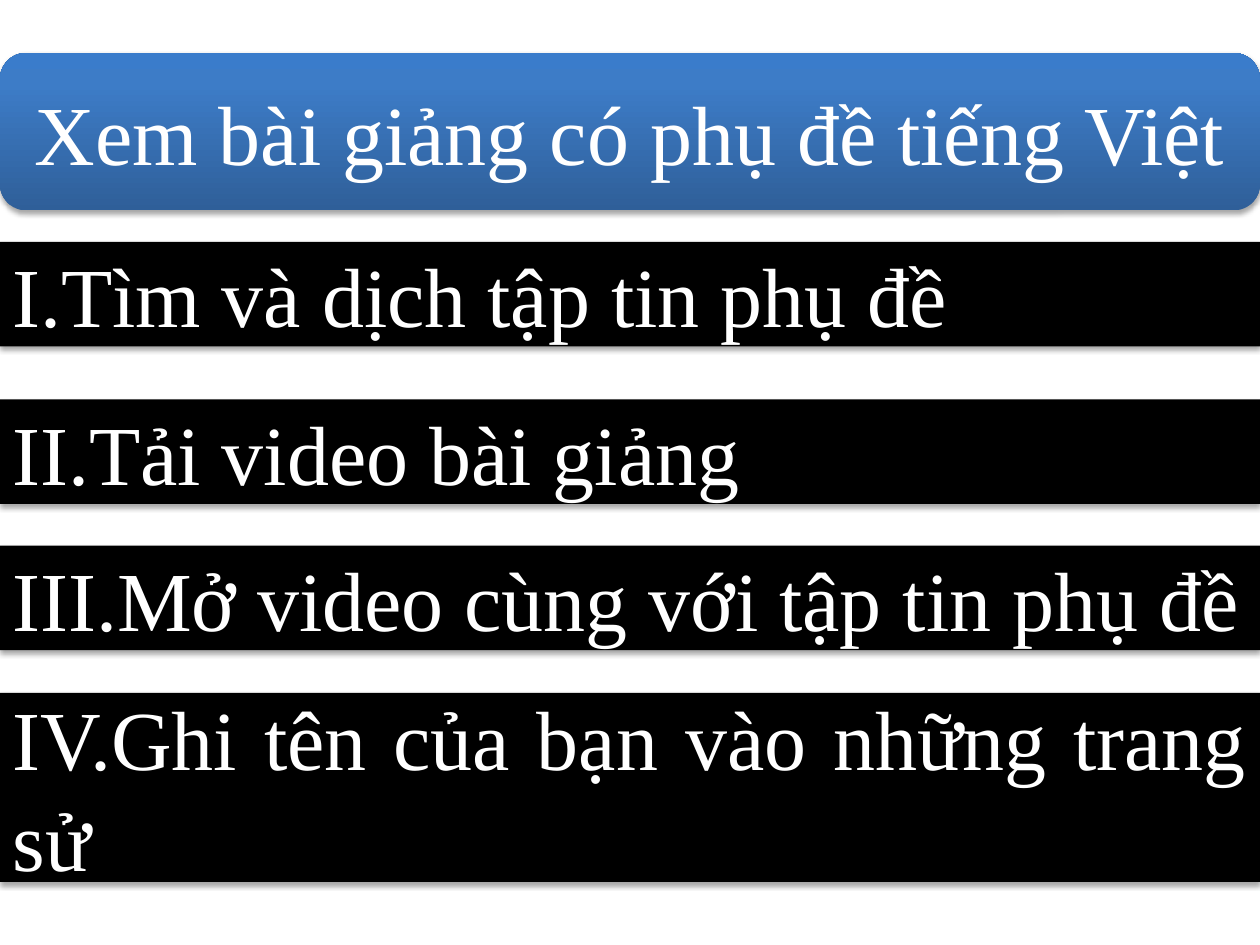
from dataclasses import dataclass

from lxml.etree import SubElement
from pptx import Presentation
from pptx.dml.color import RGBColor
from pptx.enum.shapes import MSO_SHAPE as Kind
from pptx.enum.text import MSO_ANCHOR as Anchor, PP_ALIGN as Align
from pptx.oxml.ns import qn
from pptx.shapes.autoshape import Shape
from pptx.util import Inches, Pt

BLACK = RGBColor(0x00, 0x00, 0x00)
WHITE = RGBColor(0xFF, 0xFF, 0xFF)
NAVY = RGBColor(0x2F, 0x5F, 0x99)
BLUE = RGBColor(0x3D, 0x7C, 0xC7)
SKY = RGBColor(0x3A, 0x7C, 0xCB)
STOPS = [(0, NAVY), (80, BLUE), (100, SKY)]
FONT = "Times New Roman"
SIZE = Pt(48)
WIDTH = Inches(10)


@dataclass
class Bar:
    text: str
    top: float
    height: float = 0.83


TITLE = Bar("Xem bài giảng có phụ đề tiếng Việt", 0.42, 1.25)
STEPS = [
    Bar("I.Tìm và dịch tập tin phụ đề", 1.92),
    Bar("II.Tải video bài giảng", 3.17),
    Bar("III.Mở video cùng với tập tin phụ đề", 4.33),
    Bar("IV.Ghi tên của bạn vào những trang sử", 5.5, 1.5),
]


def add_shade(shape: Shape) -> None:
    """Cast a soft shadow straight down."""
    shape.shadow.inherit = False
    effects = shape._element.spPr.find(qn("a:effectLst"))
    shade = SubElement(effects, qn("a:outerShdw"), blurRad=str(Pt(3.1)),
                       dist=str(Pt(1.8)), dir="5400000", rotWithShape="0")
    color = SubElement(shade, qn("a:srgbClr"), val=str(BLACK))
    SubElement(color, qn("a:alpha"), val="35000")


def set_blend(shape: Shape) -> None:
    """Fill with the blue gradient, dark at the bottom."""
    shape.fill.gradient()
    shape.fill.gradient_angle = 90
    stops = shape._element.spPr.find(qn("a:gradFill")).find(qn("a:gsLst"))
    for old in list(stops):
        stops.remove(old)
    for place, color in STOPS:
        stop = SubElement(stops, qn("a:gs"), pos=str(place * 1000))
        SubElement(stop, qn("a:srgbClr"), val=str(color))


def add_bar(slide, bar: Bar, kind: Kind, align: Align) -> Shape:
    """Draw a full-width black bar with white text."""
    shape = slide.shapes.add_shape(
        kind, 0, Inches(bar.top), WIDTH, Inches(bar.height))
    shape.fill.solid()
    shape.fill.fore_color.rgb = BLACK
    shape.line.fill.background()
    add_shade(shape)

    frame = shape.text_frame
    frame.word_wrap = True
    frame.vertical_anchor = Anchor.MIDDLE
    para = frame.paragraphs[0]
    para.alignment = align
    run = para.add_run()
    run.text = bar.text
    run.font.name = FONT
    run.font.size = SIZE
    run.font.color.rgb = WHITE
    return shape


def main() -> None:
    deck = Presentation()
    deck.slide_width, deck.slide_height = WIDTH, Inches(7.5)
    slide = deck.slides.add_slide(deck.slide_layouts[6])

    # Title banner
    set_blend(add_bar(slide, TITLE, Kind.ROUNDED_RECTANGLE, Align.CENTER))

    # Steps
    for step in STEPS:
        add_bar(slide, step, Kind.RECTANGLE, Align.JUSTIFY)

    deck.save("out.pptx")


if __name__ == "__main__":
    main()
